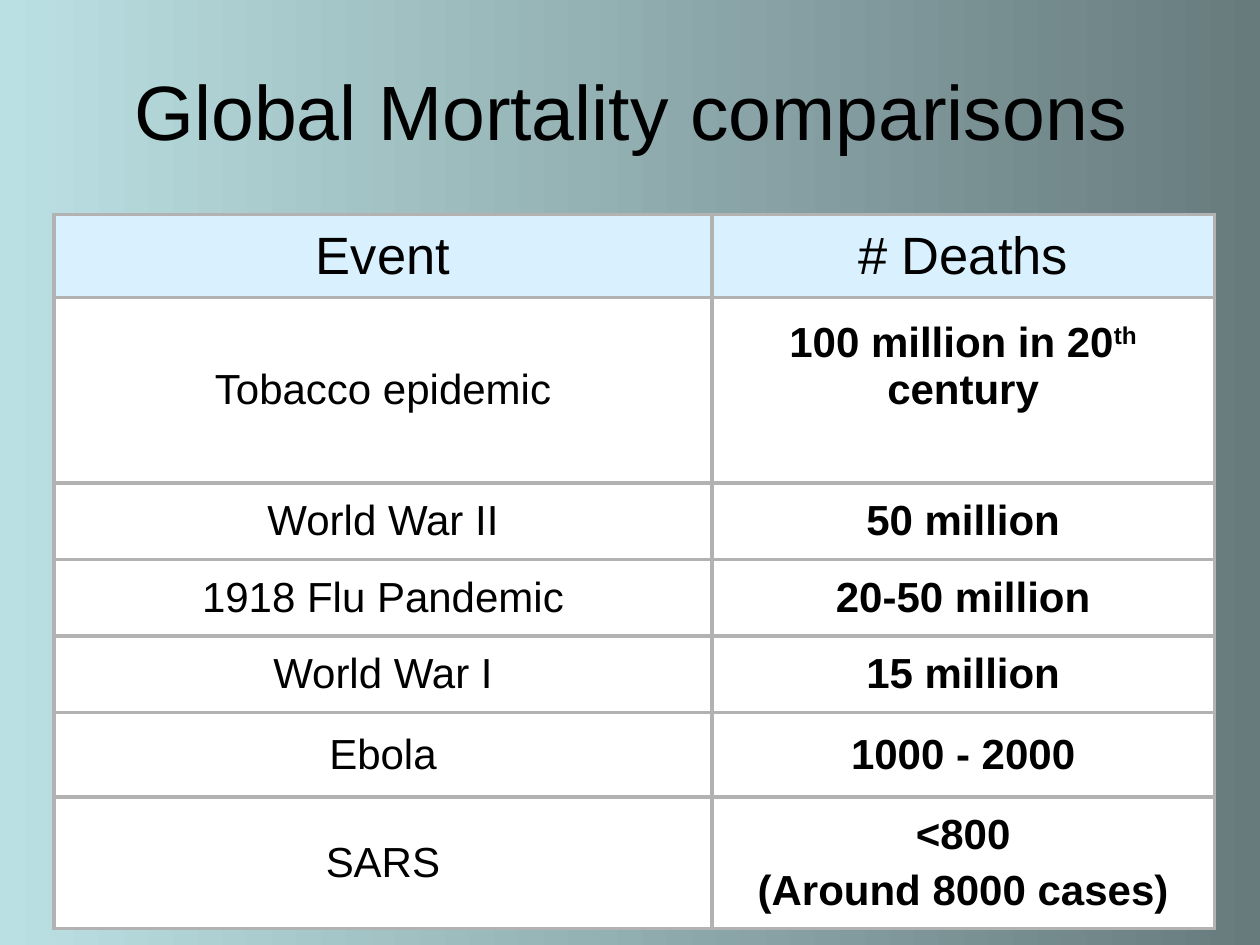
from dataclasses import dataclass

from lxml import etree
from pptx import Presentation
from pptx import util as u
from pptx.dml.color import RGBColor
from pptx.enum import text
from pptx.oxml.ns import qn

BLACK = RGBColor(0x00, 0x00, 0x00)
WHITE = RGBColor(0xFF, 0xFF, 0xFF)
HEADER_BLUE = RGBColor(0xD9, 0xF1, 0xFF)
BORDER_GREY = RGBColor(0xB2, 0xB2, 0xB2)
PALE_TEAL = RGBColor(0xBB, 0xE0, 0xE3)
DARK_TEAL = RGBColor(0x67, 0x7B, 0x7D)

BASE_FONT = {"name": "Arial", "bold": False}
COLUMN_WIDTHS = (13.26, 10.13)


@dataclass
class Span:
    text: str
    superscript: bool = False


@dataclass
class Row:
    height: float
    event: str
    deaths: list[list[Span]]
    size: float = 24
    fill: RGBColor = WHITE
    bold_deaths: bool = True
    deaths_bottom: float = 0.13


ROWS = [
    Row(1.68, "Event", [[Span("# Deaths")]], 30, HEADER_BLUE, False),
    Row(3.74, "Tobacco epidemic",
        [[Span("100 million in 20"), Span("th", True), Span(" century")]],
        deaths_bottom=1.1),
    Row(1.54, "World War II", [[Span("50 million")]]),
    Row(1.54, "1918 Flu Pandemic", [[Span("20-50 million")]]),
    Row(1.54, "World War I", [[Span("15 million")]]),
    Row(1.71, "Ebola", [[Span("1000 - 2000")]]),
    Row(2.65, "SARS", [[Span("<800")], [Span("(Around 8000 cases)")]]),
]


def write_text(frame, paragraphs: list[list[Span]], size: float, bold: bool = False) -> None:
    """Fill a text frame with centred paragraphs."""
    font_format = BASE_FONT | {"size": u.Pt(size), "bold": bold}
    frame.word_wrap = True
    for index, spans in enumerate(paragraphs):
        para = frame.add_paragraph() if index else frame.paragraphs[0]
        para.alignment = text.PP_ALIGN.CENTER
        if index:
            para.space_before = u.Pt(0.2 * size)
        for span in spans:
            run = para.add_run()
            run.text = span.text
            for name, value in font_format.items():
                setattr(run.font, name, value)
            run.font.color.rgb = BLACK
            if span.superscript:
                run._r.get_or_add_rPr().set("baseline", "30000")


def set_borders(cell) -> None:
    """Draw the same line on all four sides of a cell."""
    properties = cell._tc.get_or_add_tcPr()
    for index, side in enumerate(("lnL", "lnR", "lnT", "lnB")):
        line = etree.Element(qn(f"a:{side}"), w=str(u.Pt(2.25)))
        fill = etree.SubElement(line, qn("a:solidFill"))
        etree.SubElement(fill, qn("a:srgbClr"), val=str(BORDER_GREY))
        properties.insert(index, line)


def fill_cell(cell, row: Row, paragraphs: list[list[Span]], bold: bool, bottom: float) -> None:
    cell_format = {
        "vertical_anchor": text.MSO_ANCHOR.MIDDLE,
        "margin_left": u.Cm(0.25),
        "margin_right": u.Cm(0.25),
        "margin_top": u.Cm(0.13),
        "margin_bottom": u.Cm(bottom),
    }
    for name, value in cell_format.items():
        setattr(cell, name, value)
    cell.fill.solid()
    cell.fill.fore_color.rgb = row.fill
    set_borders(cell)
    write_text(cell.text_frame, paragraphs, row.size, bold)


def add_background(page) -> None:
    fill = page.background.fill
    fill.gradient()
    fill.gradient_angle = 0
    for stop, color in zip(fill.gradient_stops, (PALE_TEAL, DARK_TEAL)):
        stop.color.rgb = color


def add_title(page) -> None:
    box = page.shapes.add_textbox(u.Cm(2.44), u.Cm(0.76), u.Cm(20.57), u.Cm(2.92))
    box.text_frame.vertical_anchor = text.MSO_ANCHOR.MIDDLE
    write_text(box.text_frame, [[Span("Global Mortality comparisons")]], 44)


def add_mortality_table(page) -> None:
    frame = page.shapes.add_table(
        len(ROWS), len(COLUMN_WIDTHS), u.Cm(1.09), u.Cm(4.32),
        u.Cm(sum(COLUMN_WIDTHS)), u.Cm(sum(row.height for row in ROWS)))
    table = frame.table
    table.first_row = table.horz_banding = False
    for column, width in zip(table.columns, COLUMN_WIDTHS):
        column.width = u.Cm(width)
    for index, row in enumerate(ROWS):
        table.rows[index].height = u.Cm(row.height)
        fill_cell(table.cell(index, 0), row, [[Span(row.event)]], False, 0.13)
        fill_cell(table.cell(index, 1), row, row.deaths, row.bold_deaths, row.deaths_bottom)


def main() -> None:
    deck = Presentation()
    deck.slide_width, deck.slide_height = u.Cm(25.4), u.Cm(19.05)
    page = deck.slides.add_slide(deck.slide_layouts[6])

    # Background, heading and table
    add_background(page)
    add_title(page)
    add_mortality_table(page)

    deck.save("out.pptx")


if __name__ == "__main__":
    main()
